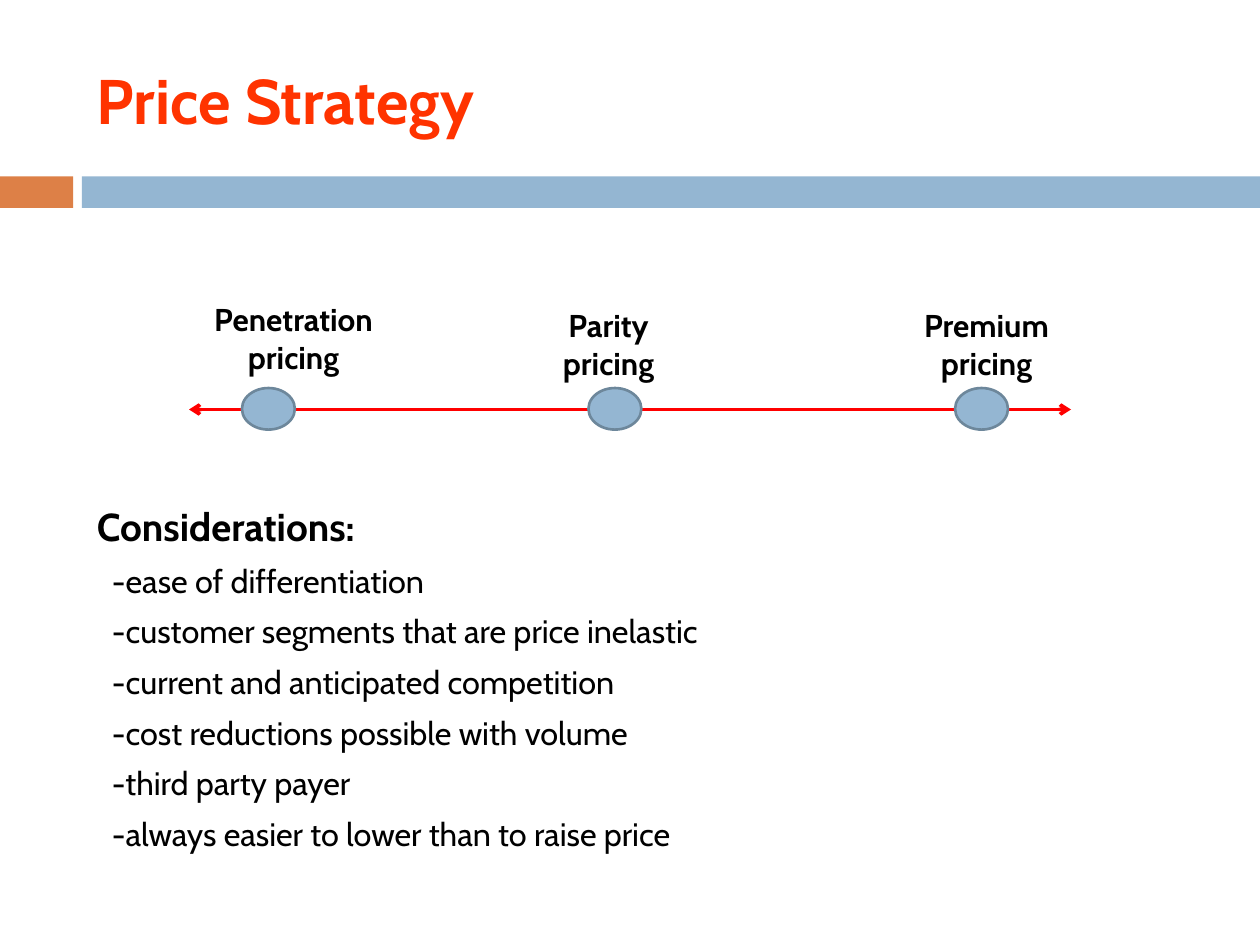
from pptx import Presentation
from pptx.dml.color import RGBColor
from pptx.enum.shapes import MSO_CONNECTOR as Connector, MSO_SHAPE as Shape
from pptx.enum.text import MSO_ANCHOR as Anchor, PP_ALIGN as Align
from pptx.oxml.ns import qn
from pptx.util import Inches, Pt
from lxml.etree import SubElement

FONT = "Cabin"
COLORS = {
    "title": "FF3300",
    "accent": "DD8047",
    "blue": "94B6D2",
    "outline": "6D879B",
    "scale": "FF0000",
    "text": "000000",
}
PRICE_POINTS = [
    ("Penetration pricing", 0.42, 0.08, 0),
    ("Parity pricing", 3.17, 2.58, 0.05),
    ("Premium pricing", 6.08, 5.58, 0.05),
]
CONSIDERATIONS = [
    "-ease of differentiation",
    "-customer segments that are price inelastic",
    "-current and anticipated competition",
    "-cost reductions possible with volume",
    "-third party payer",
    "-always easier to lower than to raise price",
]


def rgb(name):
    return RGBColor.from_string(COLORS[name])


def add_filled(slide, kind, left, top, width, height, color):
    part = slide.shapes.add_shape(
        kind, Inches(left), Inches(top), Inches(width), Inches(height))
    part.shadow.inherit = False
    part.fill.solid()
    part.fill.fore_color.rgb = rgb(color)
    part.line.fill.background()
    return part


def add_frame(slide, left, top, width, height):
    frame = slide.shapes.add_textbox(
        Inches(left), Inches(top), Inches(width), Inches(height)).text_frame
    frame.word_wrap = True
    return frame


def write(paragraph, text, size, color="text", bold=True):
    paragraph.text = text
    font = paragraph.font
    font.name, font.size, font.bold = FONT, Pt(size), bold
    font.color.rgb = rgb(color)


def add_header(slide, left, top, width):
    title = add_frame(slide, left + 0.67, top + 0.25, 8.92, 1.08)
    title.vertical_anchor = Anchor.MIDDLE
    write(title.paragraphs[0], "Price Strategy", 36, "title")
    band_top = top + 1.4
    add_filled(slide, Shape.RECTANGLE, left, band_top, 0.58, 0.25, "accent")
    add_filled(slide, Shape.RECTANGLE, left + 0.65, band_top,
               width - 0.65, 0.25, "blue")


def add_price_scale(slide, left, top, width):
    axis_y = top + 0.92
    axis = slide.shapes.add_connector(
        Connector.STRAIGHT, Inches(left), Inches(axis_y),
        Inches(left + width), Inches(axis_y))
    axis.line.color.rgb = rgb("scale")
    axis.line.width = Pt(2)
    outline = axis.line._get_or_add_ln()
    for end in ("a:headEnd", "a:tailEnd"):
        SubElement(outline, qn(end), type="arrow")
    SubElement(axis._element.spPr, qn("a:effectLst"))

    for name, marker_x, label_x, label_y in PRICE_POINTS:
        marker = add_filled(slide, Shape.OVAL, left + marker_x,
                            axis_y - 0.17, 0.42, 0.33, "blue")
        marker.line.color.rgb = rgb("outline")
        marker.line.width = Pt(1.5)
        label = add_frame(slide, left + label_x, top + label_y, 1.5, 0.71)
        write(label.paragraphs[0], name, 18)
        label.paragraphs[0].alignment = Align.CENTER


def add_considerations(slide, left, top, width, height):
    frame = add_frame(slide, left, top, width, height)
    write(frame.paragraphs[0], "Considerations:", 22.2)
    for text in CONSIDERATIONS:
        item = frame.add_paragraph()
        write(item, text, 18.5, bold=False)
        item.space_before = Pt(6.7)
        item._p.get_or_add_pPr().set("marL", str(Inches(0.12)))


def main():
    presentation = Presentation()
    presentation.slide_width = Inches(10)
    presentation.slide_height = Inches(7.5)
    slide = presentation.slides.add_slide(presentation.slide_layouts[6])
    add_header(slide, 0, 0, 10)
    add_price_scale(slide, 1.5, 2.33, 7)
    add_considerations(slide, 0.67, 3.94, 8.92, 2.73)
    presentation.save("out.pptx")


if __name__ == "__main__":
    main()
